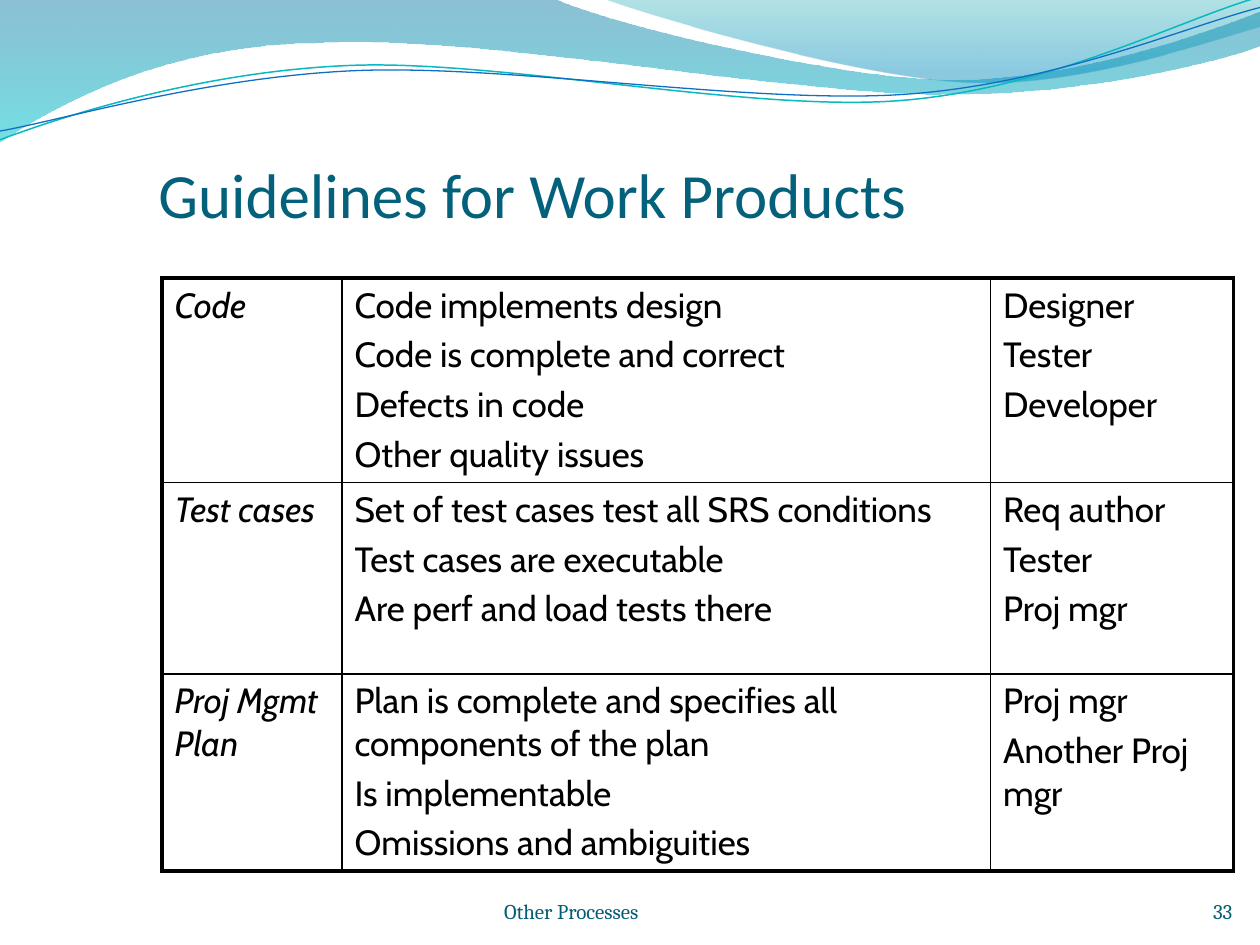
"""Build the work product guidelines slide with its wave header and review table."""
from lxml import etree
from pptx import Presentation
from pptx.dml.color import RGBColor
from pptx.enum.text import MSO_ANCHOR, MSO_AUTO_SIZE, PP_ALIGN
from pptx.oxml.ns import qn
from pptx.util import Pt

LEFT, RIGHT = PP_ALIGN.LEFT, PP_ALIGN.RIGHT
BOTTOM = MSO_ANCHOR.BOTTOM
NO_AUTOFIT = MSO_AUTO_SIZE.NONE


def add_text(paragraph, text, size, font, color, italic=False):
    run = paragraph.add_run()
    run.text = text
    run.font.size = Pt(size)
    run.font.name = font
    run.font.italic = italic
    run.font.color.rgb = RGBColor.from_string(color)


def add_wave(shapes, start, segments, close):
    builder = shapes.build_freeform(Pt(start[0]), Pt(start[1]))
    points = [(Pt(segment[i]), Pt(segment[i + 1]))
              for segment in segments for i in range(0, len(segment), 2)]
    builder.add_line_segments(points, close=close)
    shape = builder.convert_to_shape()
    shape.shadow.inherit = False
    steps = iter(list(shape.element.iter(qn("a:lnTo"))))
    for segment in segments:
        step = next(steps)
        if len(segment) == 6:
            curve = etree.Element(qn("a:cubicBezTo"))
            step.addprevious(curve)
            for element in (step, next(steps), next(steps)):
                curve.append(element[0])
                element.getparent().remove(element)
    return shape


presentation = Presentation()
presentation.slide_width, presentation.slide_height = Pt(720), Pt(540)
slide = presentation.slides.add_slide(presentation.slide_layouts[5])

bands = [
    ((0, -0.7),
     [(316.8, -0.7), (342.7, 12.2, 478.1, 45.4, 545.8, 45.4), (614.2, 45.4, 689.8, 18.7, 720, 6.5),
      (720.7, 25.9), (707.8, 31.7, 626.4, 54.7, 537.1, 54), (447.8, 54, 275, 20.2, 185, 24.5),
      (92.9, 25.2, 33.1, 59.8, -0.7, 81.4), (0, -0.7)],
     [(0, "0074A1", 45), (1, "00C6CF", 55)]),
    ((344.9, -0.7),
     [(366.5, 7.9, 491, 44.6, 553.7, 46.8), (616.3, 49.7, 691.9, 23, 720, 15.1), (720, 0),
      (344.9, -0.7)],
     [(0, "00A1A9", 30), (0.8, "008BBF", 45)]),
]
for start, segments, stops in bands:
    band = add_wave(slide.shapes, start, segments, True)
    band.line.fill.background()
    band.fill.gradient()
    band.fill.gradient_angle = 270
    for gradient_stop, (position, color, opacity) in zip(band.fill.gradient_stops, stops):
        gradient_stop.position = position
        gradient_stop.color.rgb = RGBColor.from_string(color)
    color_elements = band.element.spPr.iter(qn("a:srgbClr"))
    for color_element, (position, color, opacity) in zip(color_elements, stops):
        etree.SubElement(color_element, qn("a:alpha"), val=str(opacity * 1000))

strands = [
    ((-1.4, 62.9),
     [(33.7, 51.6, 114, 29.4, 199.8, 29.9), (284.8, 30.3, 425.8, 67.2, 512.4, 64.8),
      (599, 62.4, 676.4, 25.7, 720.2, 15.6)], "0AB8BF", 0.85),
    ((-1.2, 57.9),
     [(32.9, 53.7, 118.3, 32.5, 204, 33), (290.5, 33.5, 428.9, 63, 515.5, 61.3),
      (601.4, 59.6, 678.5, 30.1, 721.4, 21.3)], "0F6FC6", 0.75),
]
strand_group = slide.shapes.add_group_shape()
for start, segments, color, width in strands:
    strand = add_wave(strand_group.shapes, start, segments, False)
    strand.rotation = 357.3
    strand.fill.background()
    strand.line.color.rgb = RGBColor.from_string(color)
    strand.line.width = Pt(width)

title = slide.shapes.title
slide.shapes.element.append(title.element)
title.left, title.top, title.width, title.height = Pt(90.5), Pt(16.6), Pt(613.4), Pt(115.2)
frame = title.text_frame
frame.auto_size = NO_AUTOFIT
frame.vertical_anchor = BOTTOM
frame.margin_left = frame.margin_right = frame.margin_bottom = 0
frame.margin_top = Pt(3.6)
frame.paragraphs[0].alignment = LEFT
add_text(frame.paragraphs[0], "Guidelines for Work Products", 36, "Calibri", "04617B")

guidelines = [
    [["Code"],
     ["Code implements design", "Code is complete and correct", "Defects in code",
      "Other quality issues"],
     ["Designer", "Tester", "Developer"]],
    [["Test cases"],
     ["Set of test cases test all SRS conditions", "Test cases are executable",
      "Are perf and load tests there"],
     ["Req author", "Tester", "Proj mgr"]],
    [["Proj Mgmt Plan"],
     ["Plan is complete and specifies all components of the plan", "Is implementable",
      "Omissions and ambiguities"],
     ["Proj mgr", "Another Proj mgr"]],
]
column_widths = [102.8, 370.6, 138.8]
row_height = 109.4
table = slide.shapes.add_table(3, 3, Pt(92.6), Pt(158.9), Pt(sum(column_widths)),
                               Pt(3 * row_height)).table
table.first_row = table.horz_banding = False
for column, width in zip(table.columns, column_widths):
    column.width = Pt(width)
for row_index, row in enumerate(guidelines):
    table.rows[row_index].height = Pt(row_height)
    for column_index, lines in enumerate(row):
        cell = table.cell(row_index, column_index)
        outer_edges = {"L": column_index == 0, "R": column_index == 2,
                       "T": row_index == 0, "B": row_index == 2}
        properties = cell._tc.get_or_add_tcPr()
        for side, is_outer in outer_edges.items():
            border = etree.SubElement(properties, qn(f"a:ln{side}"),
                                      w=str(Pt(2.25 if is_outer else 1)))
            fill = etree.SubElement(border, qn("a:solidFill"))
            etree.SubElement(fill, qn("a:srgbClr"), val="000000")
        cell.fill.background()
        for line_index, line in enumerate(lines):
            frame = cell.text_frame
            paragraph = frame.add_paragraph() if line_index else frame.paragraphs[0]
            spacing = etree.SubElement(paragraph._p.get_or_add_pPr(), qn("a:spcBef"))
            etree.SubElement(spacing, qn("a:spcPct"), val="20000")
            add_text(paragraph, line, 20, "Cabin", "000000", column_index == 0)

footers = [("Other Processes", 288, 228, LEFT), ("33", 554.4, 149.8, RIGHT)]
for text, left, width, alignment in footers:
    footer = slide.shapes.add_textbox(Pt(left), Pt(491.8), Pt(width), Pt(36))
    frame = footer.text_frame
    frame.word_wrap = True
    frame.vertical_anchor = BOTTOM
    frame.margin_left = frame.margin_right = frame.margin_top = frame.margin_bottom = 0
    frame.paragraphs[0].alignment = alignment
    add_text(frame.paragraphs[0], text, 12, "Cambria", "045D75")

presentation.save("out.pptx")
